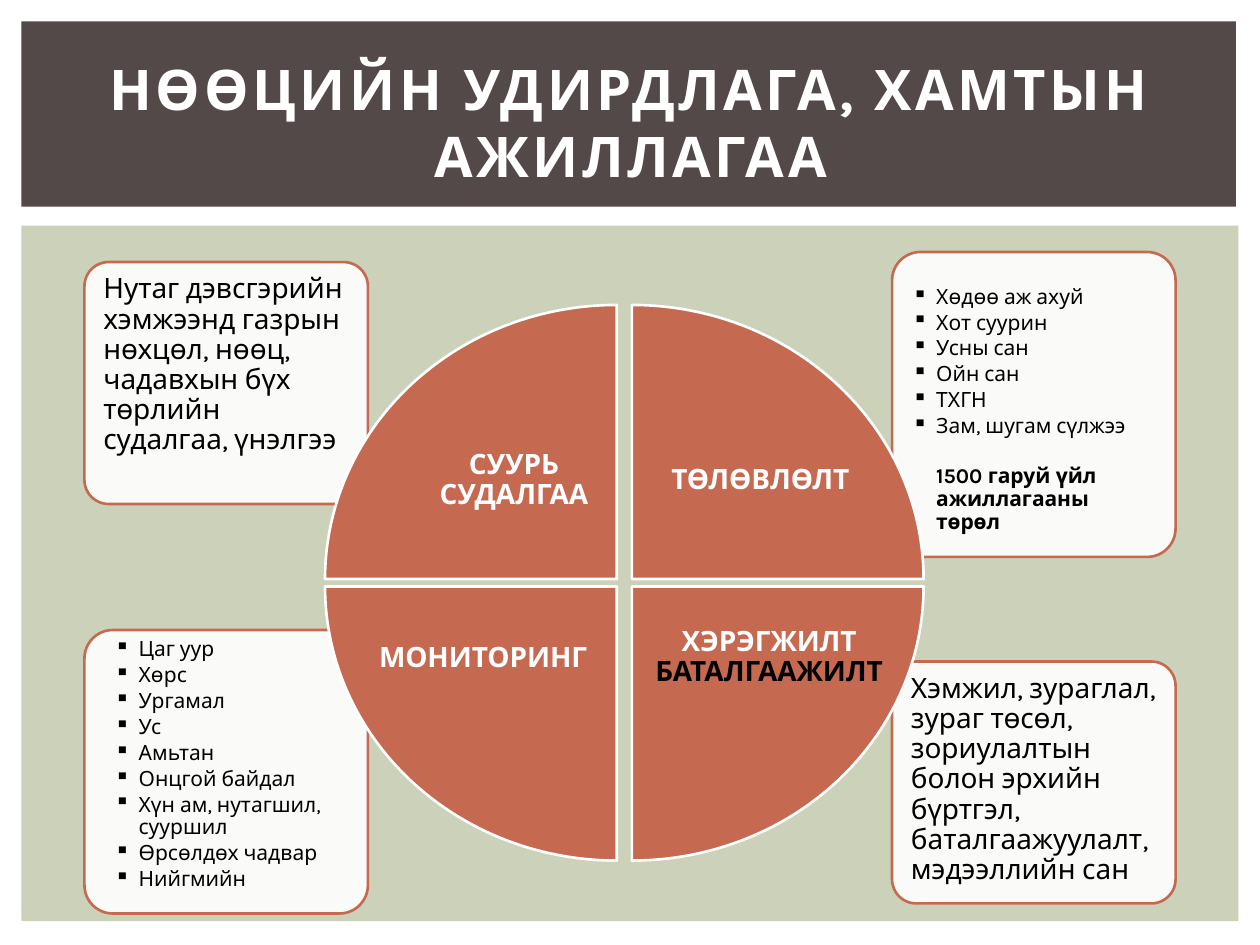
from dataclasses import dataclass

from lxml.etree import SubElement
from pptx import Presentation
from pptx.dml.color import RGBColor
from pptx.enum.shapes import MSO_SHAPE as Shape
from pptx.enum.text import MSO_ANCHOR as Anchor, PP_ALIGN as Align
from pptx.oxml.ns import qn
from pptx.util import Inches, Pt


@dataclass(frozen=True)
class Theme:
    """Colours, font and type sizes of the slide."""
    font: str = "Karla"
    panel: str = "CCD1B9"
    banner: str = "534949"
    accent: str = "C66951"
    light: str = "FFFFFF"
    dark: str = "000000"
    title: int = 32
    body: int = 16
    bullet: int = 12


THEME = Theme()
HANG = Inches(0.19)


def add_block(slide, kind, box, fill, line=None):
    """Add a flat preset shape in box, given in inches."""
    block = slide.shapes.add_shape(kind, *map(Inches, box))
    block.shadow.inherit = False
    block.fill.solid()
    block.fill.fore_color.rgb = RGBColor.from_string(fill)
    if line:
        block.line.color.rgb = RGBColor.from_string(line)
        block.line.width = Pt(1.5)
    else:
        block.line.fill.background()
    return block


def add_text(slide, box, inset, anchor=Anchor.TOP):
    """Add a wrapping text box and return its frame."""
    frame = slide.shapes.add_textbox(*map(Inches, box)).text_frame
    frame.word_wrap = True
    frame.vertical_anchor = anchor
    frame.margin_left = frame.margin_right = Inches(inset)
    frame.margin_top = frame.margin_bottom = Inches(inset)
    return frame


def style_run(run, size, color, bold=False):
    """Give a run the theme font with a size and a colour."""
    run.font.name = THEME.font
    run.font.size = Pt(size)
    run.font.bold = bold
    run.font.color.rgb = RGBColor.from_string(color)


def add_title(slide, box, title):
    """Draw the banner with its spaced title."""
    left, top, width, height = box
    add_block(slide, Shape.RECTANGLE, box, THEME.banner)
    label_box = (left + 0.25, top + 0.22, width - 0.47, height - 0.32)
    frame = add_text(slide, label_box, 0.05, Anchor.MIDDLE)
    frame.text = title
    heading = frame.paragraphs[0]
    heading.alignment = Align.CENTER
    style_run(heading.runs[0], THEME.title, THEME.light, True)
    heading.runs[0].font._element.set("spc", "200")


def add_card(slide, box, offset):
    """Draw a rounded card and return the frame of its text."""
    left, top, width, height = box
    card = add_block(slide, Shape.ROUNDED_RECTANGLE, box, THEME.light, THEME.accent)
    card.adjustments[0] = 0.1
    color = card.fill._xPr.find(qn("a:solidFill"))[0]
    SubElement(color, qn("a:alpha"), val="90000")
    across, down = offset
    return add_text(slide, (left + across, top + down, width - 0.16, height - down - 0.2), 0.07)


def add_prose_card(slide, box, prose):
    """Draw a card that holds one paragraph."""
    frame = add_card(slide, box, (0.08, 0.03))
    frame.text = prose
    frame.paragraphs[0].line_spacing = 0.9
    style_run(frame.paragraphs[0].runs[0], THEME.body, THEME.dark)


def add_list_card(slide, box, offset, items, closing=None):
    """Draw a card with square bullets and an optional bold closing line."""
    frame = add_card(slide, box, offset)
    frame.text = "\n".join(items + ([closing] if closing else []))
    for index, entry in enumerate(frame.paragraphs):
        is_item = index < len(items)
        entry.line_spacing = 0.9
        entry.space_after = Pt(1.8)
        if not is_item:
            entry.space_before = Pt(14)
        props = entry._p.get_or_add_pPr()
        props.set("marL", str(HANG))
        if is_item:
            props.set("indent", str(-HANG))
            SubElement(props, qn("a:buChar"), char="▪")
        style_run(entry.runs[0], THEME.bullet, THEME.dark, not is_item)


def add_wheel(slide, box, quarters):
    """Draw four wedges clockwise from the upper left, with their labels."""
    left, top, width, height = box
    gap_x, gap_y = 0.12, 0.06
    wedge_w, wedge_h = (width - gap_x) / 2, (height - gap_y) / 2
    cells = ((0, 0), (1, 0), (1, 1), (0, 1))
    for turn, ((col, row), (label_box, words)) in enumerate(zip(cells, quarters)):
        center_x = left + col * (wedge_w + gap_x) + wedge_w / 2
        center_y = top + row * (wedge_h + gap_y) + wedge_h / 2
        w, h = (wedge_h, wedge_w) if turn % 2 else (wedge_w, wedge_h)
        wedge = add_block(slide, Shape.PIE_WEDGE, (center_x - w / 2, center_y - h / 2, w, h),
                          THEME.accent, THEME.light)
        wedge.rotation = 90 * turn
        across, down, label_w, label_h = label_box
        frame = add_text(slide, (left + across, top + down, label_w, label_h), 0.19, Anchor.MIDDLE)
        label = frame.paragraphs[0]
        label.alignment = Align.CENTER
        label.line_spacing = 0.9
        label.space_after = Pt(5.6)
        for word, color in words:
            run = label.add_run()
            run.text = word
            style_run(run, THEME.body, color, True)


def main():
    """Build the slide and save it."""
    deck = Presentation()
    deck.slide_width, deck.slide_height = Inches(10), Inches(7.5)
    slide = deck.slides.add_slide(deck.slide_layouts[6])

    add_block(slide, Shape.RECTANGLE, (0.17, 1.79, 9.66, 5.52), THEME.panel)
    add_title(slide, (0.17, 0.17, 9.64, 1.47), "НӨӨЦИЙН УДИРДЛАГА, ХАМТЫН АЖИЛЛАГАА")

    left, right, card_w = 0.67, 7.08, 2.25
    add_prose_card(slide, (left, 2.08, card_w, 1.92),
                   "Нутаг дэвсгэрийн хэмжээнд газрын нөхцөл, нөөц, чадавхын бүх "
                   "төрлийн судалгаа, үнэлгээ")
    add_list_card(slide, (right, 2, card_w, 2.42), (0.09, 0.2),
                  ["Хөдөө аж ахуй", "Хот суурин", "Усны сан", "Ойн сан", "ТХГН",
                   "Зам, шугам сүлжээ"],
                  "1500 гаруй үйл ажиллагааны төрөл")
    add_list_card(slide, (left, 5, card_w, 2.25), (0.17, 0),
                  ["Цаг уур", "Хөрс", "Ургамал", "Ус", "Амьтан", "Онцгой байдал",
                   "Хүн ам, нутагшил, сууршил", "Өрсөлдөх чадвар", "Нийгмийн"])
    add_prose_card(slide, (right, 5.25, card_w, 1.92),
                   "Хэмжил, зураглал, зураг төсөл, зориулалтын болон эрхийн бүртгэл, "
                   "баталгаажуулалт, мэдээллийн сан")

    add_wheel(slide, (2.58, 2.42, 4.75, 4.41), [
        ((0.68, 0.63, 1.64, 1.53), [("СУУРЬ СУДАЛГАА", THEME.light)]),
        ((2.45, 0.63, 2.01, 1.53), [("ТӨЛӨВЛӨЛТ", THEME.light)]),
        ((2.34, 2.02, 2.37, 1.55), [("ХЭРЭГЖИЛТ ", THEME.light), ("БАТАЛГААЖИЛТ", THEME.dark)]),
        ((0.09, 2.04, 2.33, 1.54), [("МОНИТОРИНГ", THEME.light)]),
    ])
    deck.save("out.pptx")


if __name__ == "__main__":
    main()
